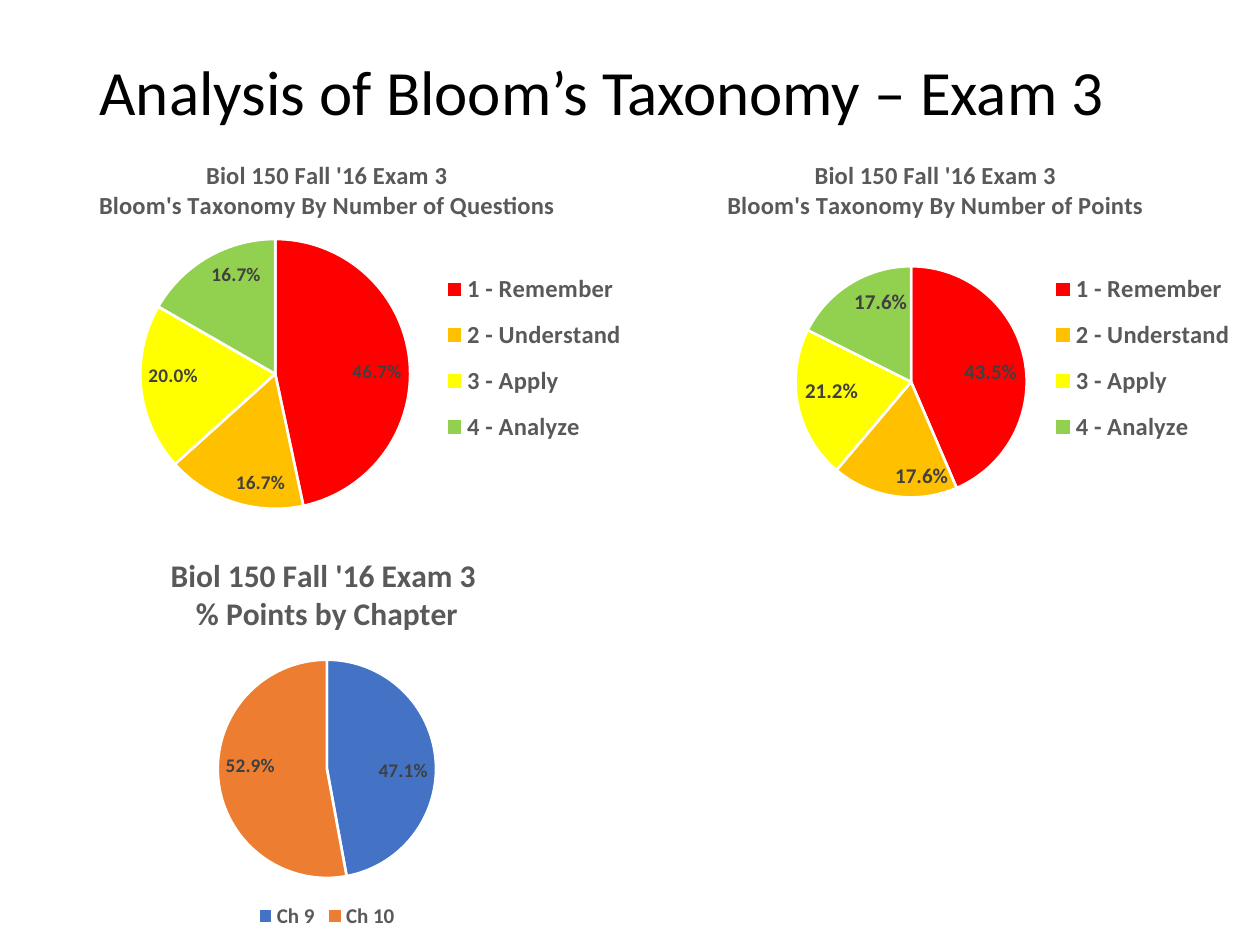
from dataclasses import dataclass

from lxml import etree
from pptx import Presentation
from pptx import util as u
from pptx.chart.data import CategoryChartData
from pptx.dml.color import RGBColor
from pptx.enum import chart as kinds, text
from pptx.oxml.ns import qn


@dataclass
class Theme:
    font: str = "Calibri"
    heading: str = "000000"
    muted: str = "595959"
    label: str = "404040"
    border: str = "FFFFFF"
    bloom: tuple = ("FF0000", "FFC000", "FFFF00", "92D050")
    chapter: tuple = ("4472C4", "ED7D31")
    title_size: int = 36
    chart_size: int = 10


THEME = Theme()
TITLE = "Analysis of Bloom’s Taxonomy – Exam 3"
LEVELS = ["1 - Remember", "2 - Understand", "3 - Apply", "4 - Analyze"]
SIDE_LEGEND = (0.69, 0.3, 0.31, 0.5)

PIES = [
    dict(cell=(0, 0), title="Biol 150 Fall '16 Exam 3\nBloom's Taxonomy By Number of Questions",
         names=LEVELS, values=(0.467, 0.167, 0.2, 0.167), colors=THEME.bloom,
         plot=(0.19, 0.25, 0.45, 0.68), legend=SIDE_LEGEND, sizes=(14, 14, 11)),
    dict(cell=(1, 0), title="Biol 150 Fall '16 Exam 3\nBloom's Taxonomy By Number of Points",
         names=LEVELS, values=(0.435, 0.176, 0.212, 0.176), colors=THEME.bloom,
         plot=(0.27, 0.29, 0.38, 0.64), legend=SIDE_LEGEND, sizes=(14, 14, 12)),
    dict(cell=(0, 1), title="Biol 150 Fall '16 Exam 3 \n% Points by Chapter",
         names=["Ch 9", "Ch 10"], values=(0.471, 0.529), colors=THEME.chapter,
         plot=(0.32, 0.31, 0.36, 0.55), legend=None, sizes=(18, 12, 11)),
]
LEFT, TOP, WIDTH, HEIGHT = 0.18, 1.11, 4.83, 3.15


def style(font, size, color, bold=False):
    font.name = THEME.font
    font.size = u.Pt(size)
    font.bold = bold
    font.color.rgb = RGBColor.from_string(color)


def write(frame, content, size, color, bold=False, align=None, spacing=None):
    frame.text = content
    for para in frame.paragraphs:
        para.alignment = align
        para.line_spacing = spacing
        for span in para.runs:
            style(span.font, size, color, bold)


def place(parent, index, area, inner=False):
    for old in parent.findall(qn("c:layout")):
        parent.remove(old)
    layout = etree.Element(qn("c:layout"))
    manual = etree.SubElement(layout, qn("c:manualLayout"))
    settings = [("layoutTarget", "inner")] if inner else []
    settings += [("xMode", "edge"), ("yMode", "edge")]
    settings += zip("xywh", area)
    for name, value in settings:
        etree.SubElement(manual, qn(f"c:{name}")).set("val", str(value))
    parent.insert(index, layout)


def add_pie(page, pie):
    title_size, legend_size, label_size = pie["sizes"]
    column, row = pie["cell"]
    data = CategoryChartData(number_format="0.0%")
    data.categories = pie["names"]
    data.add_series("Series 1", pie["values"])
    chart = page.shapes.add_chart(
        kinds.XL_CHART_TYPE.PIE, u.Inches(LEFT + column * WIDTH),
        u.Inches(TOP + row * HEIGHT), u.Inches(WIDTH), u.Inches(HEIGHT), data).chart
    style(chart.font, THEME.chart_size, THEME.heading)

    chart.has_title = True
    write(chart.chart_title.text_frame, pie["title"], title_size, THEME.muted, bold=True)
    place(chart.plots[0]._element.getparent(), 0, pie["plot"], inner=True)

    chart.has_legend = True
    legend = chart.legend
    legend.include_in_layout = False
    style(legend.font, legend_size, THEME.muted, True)
    position = kinds.XL_LEGEND_POSITION
    legend.position = position.RIGHT if pie["legend"] else position.BOTTOM
    if pie["legend"]:
        place(legend._element, 1, pie["legend"])

    plot = chart.plots[0]
    plot.vary_by_categories = True
    plot.has_data_labels = True
    labels = plot.data_labels
    labels.show_value = True
    labels.show_percentage = False
    labels.number_format = "0.0%"
    labels.number_format_is_linked = False
    labels.position = kinds.XL_LABEL_POSITION.INSIDE_END
    style(labels.font, label_size, THEME.label, True)
    for index, color in enumerate(pie["colors"]):
        form = plot.series[0].points[index].format
        form.fill.solid()
        form.fill.fore_color.rgb = RGBColor.from_string(color)
        form.line.color.rgb = RGBColor.from_string(THEME.border)
        form.line.width = u.Pt(1.5)


def main():
    deck = Presentation()
    deck.slide_width, deck.slide_height = u.Inches(10), u.Inches(7.5)
    page = deck.slides.add_slide(deck.slide_layouts[5])
    title = page.shapes.title
    title.left, title.top, title.width, title.height = map(u.Inches, (0.69, 0.4, 8.62, 0.71))
    title.text_frame.vertical_anchor = text.MSO_ANCHOR.MIDDLE
    write(title.text_frame, TITLE, THEME.title_size, THEME.heading,
          align=text.PP_ALIGN.LEFT, spacing=0.9)
    for pie in PIES:
        add_pie(page, pie)
    deck.save("out.pptx")


if __name__ == "__main__":
    main()
